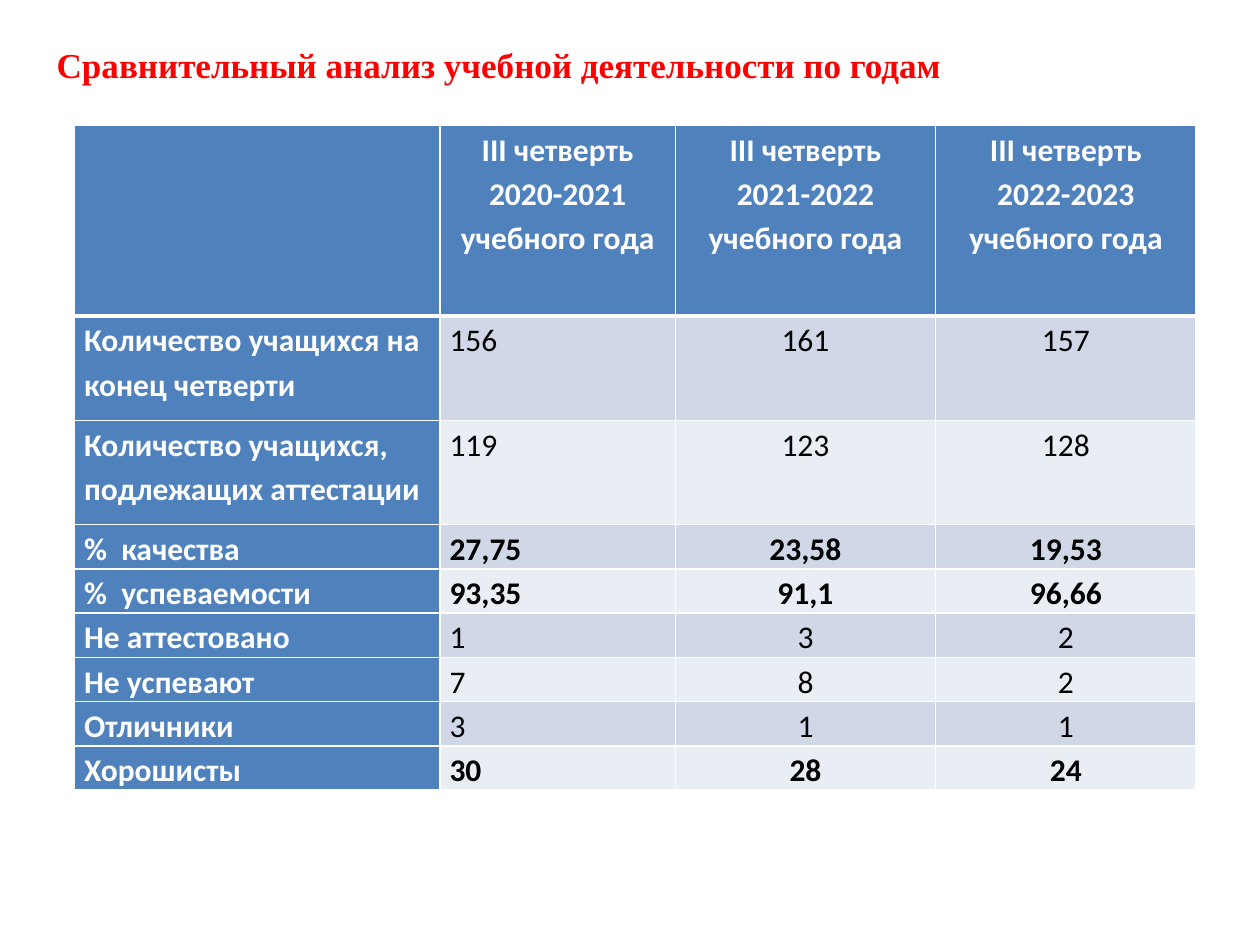
from lxml import etree
from pptx import Presentation
from pptx.dml.color import RGBColor
from pptx.enum import text as t
from pptx.oxml import ns
from pptx.util import Pt

BLUE, WHITE, BLACK, RED = "4F81BD", "FFFFFF", "000000", "FF0000"
BANDS = ["D0D8E8", "E9EDF4"]
YEARS = ["2020-2021", "2021-2022", "2022-2023"]
# Label lines, values, bold values
ROWS = [
    ("Количество учащихся на конец четверти", ["156", "161", "157"], False),
    ("Количество учащихся,\nподлежащих аттестации", ["119", "123", "128"], False),
    ("%  качества", ["27,75", "23,58", "19,53"], True),
    ("%  успеваемости", ["93,35", "91,1", "96,66"], True),
    ("Не аттестовано", ["1", "3", "2"], False),
    ("Не успевают", ["7", "8", "2"], False),
    ("Отличники", ["3", "1", "1"], False),
    ("Хорошисты", ["30", "28", "24"], True),
]
WIDTHS = [208.8, 134.4, 148.8, 148.8]
HEIGHTS = [109] + [59.6] * 2 + [24.8] * 6


def color(code):
    return RGBColor.from_string(code)


def style(para, face, size, code, bold, align):
    font = para.font
    font.name, font.size, font.bold = face, Pt(size), bold
    font.color.rgb = color(code)
    para.alignment = align


def edge(cell, side, width):
    line = etree.SubElement(cell._tc.get_or_add_tcPr(), ns.qn("a:ln" + side),
                            w=str(Pt(width)))
    fill = etree.SubElement(line, ns.qn("a:solidFill"))
    etree.SubElement(fill, ns.qn("a:srgbClr"), val=WHITE)


def put(grid, row, col, words, fill, code, bold):
    cell = grid.cell(row, col)
    cell.margin_left = cell.margin_right = Pt(5.4)
    cell.margin_top = cell.margin_bottom = 0
    # The rule under the header is thicker
    for side in "LRTB":
        thick = (row, side) in [(0, "B"), (1, "T")]
        edge(cell, side, 3 if thick else 1)
    cell.fill.solid()
    cell.fill.fore_color.rgb = color(fill)
    cell.text = words
    centred = row == 0 or col > 1
    align = t.PP_ALIGN.CENTER if centred else t.PP_ALIGN.LEFT
    for para in cell.text_frame.paragraphs:
        style(para, "Calibri", 18, code, bold, align)
        para.line_spacing = 1.15


def add_title(slide, words):
    title = slide.shapes.title
    title.left, title.top = Pt(25.2), Pt(21)
    title.width, title.height = Pt(640.8), Pt(31.6)
    frame = title.text_frame
    frame.text = words
    frame.word_wrap = True
    frame.auto_size = t.MSO_AUTO_SIZE.NONE
    frame.vertical_anchor = t.MSO_ANCHOR.MIDDLE
    style(frame.paragraphs[0], "Times New Roman", 20, RED, True, t.PP_ALIGN.LEFT)


def add_grid(slide):
    grid = slide.shapes.add_table(
        len(HEIGHTS), len(WIDTHS), Pt(42.7), Pt(71.6),
        Pt(sum(WIDTHS)), Pt(sum(HEIGHTS))).table
    for col, width in zip(grid.columns, WIDTHS):
        col.width = Pt(width)
    for row, height in zip(grid.rows, HEIGHTS):
        row.height = Pt(height)
    # Header row
    heads = [""] + [f"III четверть\n{year} учебного года" for year in YEARS]
    for col, head in enumerate(heads):
        put(grid, 0, col, head, BLUE, WHITE, True)
    # Labels and values
    for row, (label, values, bold) in enumerate(ROWS, 1):
        put(grid, row, 0, label, BLUE, WHITE, True)
        for col, value in enumerate(values, 1):
            put(grid, row, col, value, BANDS[(row - 1) % 2], BLACK, bold)


def main():
    deck = Presentation()
    deck.slide_width, deck.slide_height = Pt(720), Pt(540)
    slide = deck.slides.add_slide(deck.slide_layouts[5])
    add_grid(slide)
    add_title(slide, "Сравнительный анализ учебной деятельности по годам")
    deck.save("out.pptx")


if __name__ == "__main__":
    main()
